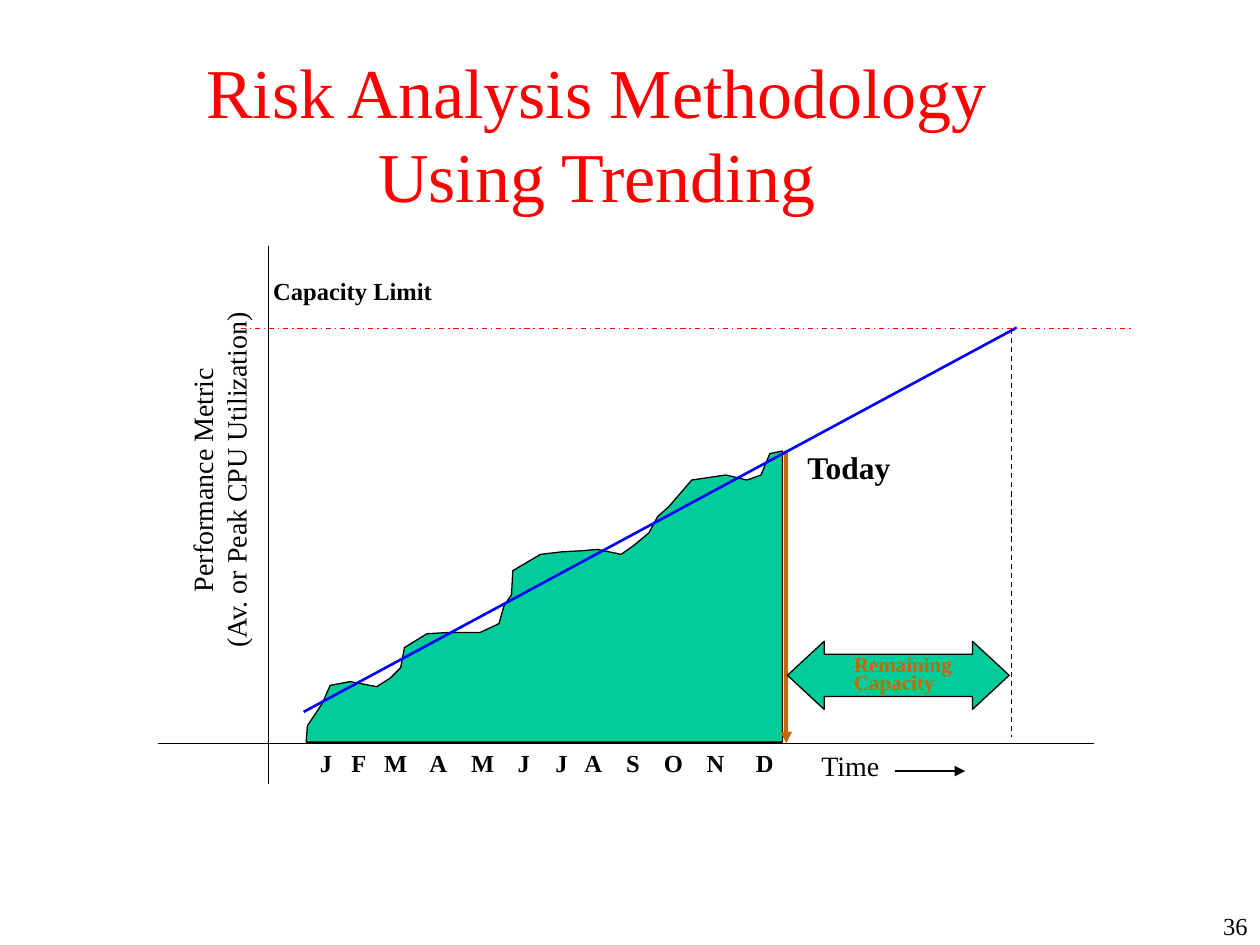
from lxml import etree
from pptx import Presentation
from pptx import util as u
from pptx.dml import color
from pptx.enum import dml, shapes, text
from pptx.oxml import ns

PX = 9144  # EMU in one px, 100 px to the inch
BLACK, RED, BLUE, GREEN, ORANGE = "000000", "FF0000", "0000FF", "00CC99", "CC6600"
MONTHS = "JFMAMJJASOND"
MONTH_TABS = [25, 51, 87, 120, 157, 187, 210, 243, 273, 307, 346]
USAGE = [(244, 576), (256, 558), (262, 544), (278, 541), (299, 545), (310, 538),
         (318, 530), (321, 514), (329, 509), (339, 503), (356, 502), (381, 502),
         (396, 495), (400, 481), (406, 472), (407, 453), (429, 440), (446, 438),
         (464, 437), (474, 436), (493, 440), (503, 433), (515, 423), (522, 410),
         (531, 402), (549, 381), (576, 377), (593, 381), (604, 377), (611, 360),
         (621, 358), (621, 589), (243, 589)]


def px(*values):
    return [u.Emu(v * PX) for v in values]


def rgb(value):
    return color.RGBColor.from_string(value)


def child(parent, tag, **attrs):
    return etree.SubElement(parent, ns.qn(tag), attrs)


class Slide:
    font = "Times New Roman"

    def __init__(self, prs):
        self.s = prs.slides.add_slide(prs.slide_layouts[5])

    def add_text(self, tf, lines, size, fill=BLACK, bold=False, align=text.PP_ALIGN.LEFT,
                 spacing=None):
        tf.word_wrap = True
        p = tf.paragraphs[0]
        p.alignment = align
        if spacing:
            p.line_spacing = spacing
        for i, words in enumerate(lines):
            if i:
                p.add_line_break()
            r = p.add_run()
            r.text = words
            r.font.name, r.font.size, r.font.bold = self.font, u.Pt(size), bold
            r.font.color.rgb = rgb(fill)
        return p

    def title(self, box, lines, size, fill):
        sp = self.s.shapes.title
        sp.left, sp.top, sp.width, sp.height = px(*box)
        tf = sp.text_frame
        tf.auto_size = text.MSO_AUTO_SIZE.NONE
        tf.vertical_anchor = text.MSO_ANCHOR.MIDDLE
        self.add_text(tf, lines, size, fill, align=text.PP_ALIGN.CENTER)

    def label(self, box, lines, size, rotation=0, **style):
        sp = self.s.shapes.add_textbox(*px(*box))
        sp.rotation = rotation
        return self.add_text(sp.text_frame, lines, size, **style)

    def tabbed(self, box, words, stops, size, **style):
        p = self.label(box, ["\t".join(words)], size, **style)
        tabs = child(p._p.get_or_add_pPr(), "a:tabLst")
        for stop in stops:
            child(tabs, "a:tab", pos=str(stop * PX), algn="l")

    def line(self, start, end, fill=BLACK, width=0.75, dash=None, arrow=None):
        cx = self.s.shapes.add_connector(shapes.MSO_CONNECTOR.STRAIGHT, *px(*start, *end))
        cx.line.color.rgb, cx.line.width = rgb(fill), u.Pt(width)
        if dash:
            cx.line.dash_style = dash
        props = cx._element.spPr
        if arrow:
            child(props.find(ns.qn("a:ln")), arrow, type="triangle")
        child(props, "a:effectLst")

    def paint(self, sp, fill):
        sp.shadow.inherit = False
        sp.fill.solid()
        sp.fill.fore_color.rgb = rgb(fill)
        sp.line.color.rgb, sp.line.width = rgb(BLACK), u.Pt(0.75)

    def area(self, points, fill):
        builder = self.s.shapes.build_freeform(*points[0], scale=PX)
        builder.add_line_segments(points[1:], close=True)
        self.paint(builder.convert_to_shape(), fill)

    def double_arrow(self, box, adjustments, fill):
        sp = self.s.shapes.add_shape(shapes.MSO_SHAPE.LEFT_RIGHT_ARROW, *px(*box))
        for i, value in enumerate(adjustments):
            sp.adjustments[i] = value
        self.paint(sp, fill)


def main():
    prs = Presentation()
    prs.slide_width, prs.slide_height = px(1000, 750)
    s = Slide(prs)
    dash = dml.MSO_LINE

    # Title and page number
    s.title((146, 52, 655, 106), ["Risk Analysis Methodology", "Using Trending"], 40, RED)
    s.label((792, 718, 208, 32), ["36"], 14, align=text.PP_ALIGN.RIGHT)

    # Usage by month
    s.area(USAGE, GREEN)
    s.tabbed((244, 589, 415, 33), MONTHS, MONTH_TABS, 14, bold=True)

    # Axes and their names
    s.line((213, 195), (213, 622))
    s.line((125, 590), (868, 590))
    s.label((642, 589, 170, 37), ["Time"], 16)
    s.line((710, 612), (766, 612), arrow="a:tailEnd")
    s.label((13, 349, 322, 64), ["Performance Metric", "(Av. or Peak CPU Utilization)"],
            16, rotation=270, align=text.PP_ALIGN.CENTER)

    # Today
    s.line((624, 590), (624, 358), ORANGE, 2.25, arrow="a:headEnd")
    s.label((631, 351, 89, 40), ["Today"], 18, bold=True)

    # Remaining capacity
    s.double_arrow((625, 509, 176, 54), (0.62, 0.54), GREEN)
    s.label((668, 518, 110, 38), ["Remaining", "Capacity"], 12, fill=ORANGE, bold=True,
            spacing=0.7)

    # Trend up to the capacity limit
    s.line((241, 565), (807, 260), BLUE, 1.5)
    s.line((191, 261), (900, 261), RED, dash=dash.DASH_DOT)
    s.label((207, 214, 270, 33), ["Capacity Limit"], 14, bold=True)
    s.line((803, 261), (803, 585), dash=dash.DASH)

    prs.save("out.pptx")


if __name__ == "__main__":
    main()
